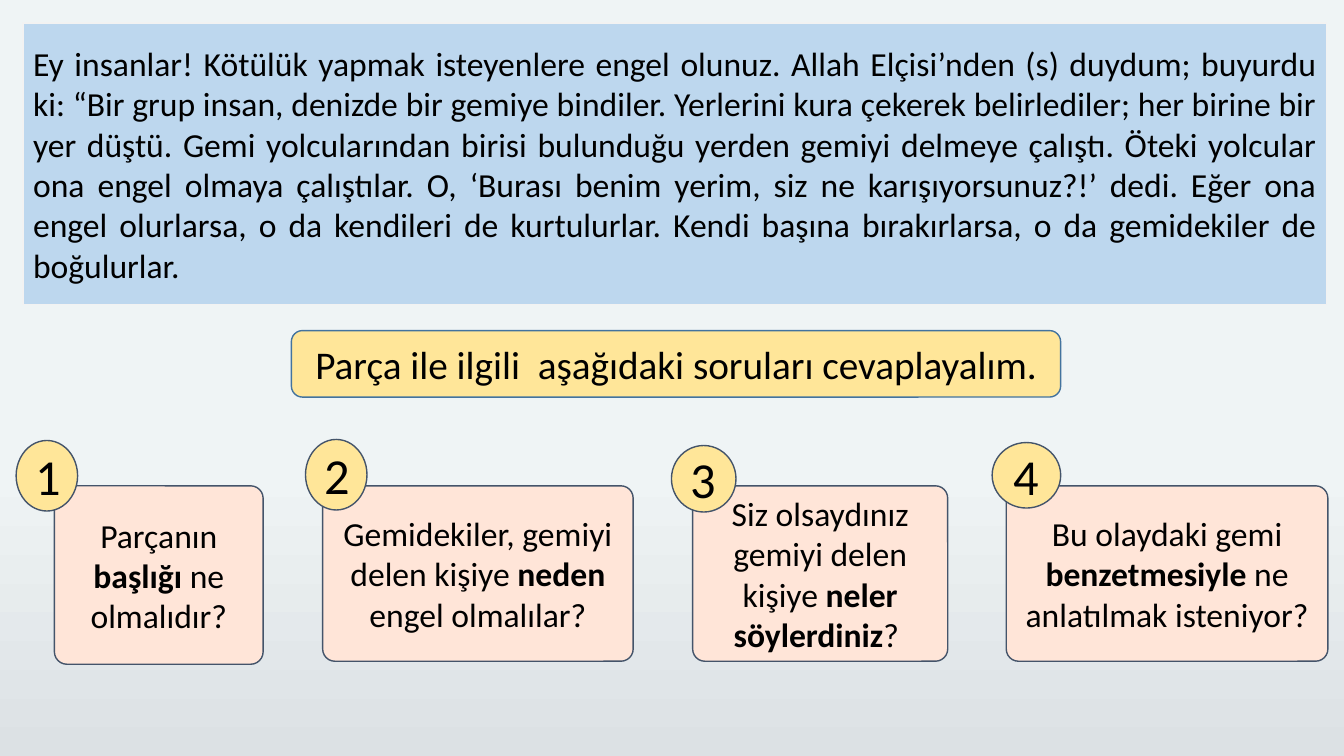
from pptx import Presentation
from pptx.dml.color import RGBColor
from pptx.enum.shapes import MSO_SHAPE as Shape
from pptx.enum.text import MSO_ANCHOR as Anchor, PP_ALIGN as Align
from pptx.util import Inches, Pt

PASSAGE = (
    "Ey insanlar! Kötülük yapmak isteyenlere engel olunuz. Allah Elçisi’nden (s) duydum; "
    "buyurdu ki: “Bir grup insan, denizde bir gemiye bindiler. Yerlerini kura çekerek "
    "belirlediler; her birine bir yer düştü. Gemi yolcularından birisi bulunduğu yerden "
    "gemiyi delmeye çalıştı. Öteki yolcular ona engel olmaya çalıştılar. O, ‘Burası benim "
    "yerim, siz ne karışıyorsunuz?!’ dedi. Eğer ona engel olurlarsa, o da kendileri de "
    "kurtulurlar. Kendi başına bırakırlarsa, o da gemidekiler de boğulurlar."
)
PROMPT = "Parça ile ilgili  aşağıdaki soruları cevaplayalım."
QUESTIONS = [
    {"parts": ("Parçanın ", "başlığı", " ne olmalıdır?"),
     "card": (0.54, 2.07, 1.77), "badge": (0.16, 4.37, 0.61, 0.7)},
    {"parts": ("Gemidekiler, gemiyi delen kişiye ", "neden", " engel olmalılar?"),
     "card": (3.2, 3.08, 1.74), "badge": (3.03, 4.36, 0.61, 0.7)},
    {"parts": ("Siz olsaydınız gemiyi delen kişiye ", "neler söylerdiniz", "? "),
     "card": (6.87, 2.53, 1.74), "badge": (6.66, 4.42, 0.64, 0.66)},
    {"parts": ("Bu olaydaki gemi ", "benzetmesiyle", " ne anlatılmak isteniyor?"),
     "card": (9.98, 3.19, 1.74), "badge": (9.84, 4.39, 0.68, 0.65)},
]
CARD_TOP = 4.82
CARD_ROUNDING = 0.07

BLACK = RGBColor(0x00, 0x00, 0x00)
PALE_GREY = RGBColor(0xF2, 0xF2, 0xF2)
LIGHT_BLUE = RGBColor(0xBD, 0xD7, 0xEE)
YELLOW = RGBColor(0xFF, 0xE6, 0x99)
PEACH = RGBColor(0xFF, 0xE5, 0xD8)
BLUE = RGBColor(0x43, 0x73, 0x9E)
SLATE = RGBColor(0x44, 0x54, 0x6A)
BACKGROUND = [(0.62, RGBColor(0xEF, 0xF4, 0xF5)), (1, RGBColor(0xDC, 0xE1, 0xE4))]


def add_box(page, parts, kind, area, fill, line, size=24, align=Align.CENTER):
    box = page.shapes.add_shape(kind, *(Inches(length) for length in area))
    box.shadow.inherit = False
    box.fill.solid()
    box.fill.fore_color.rgb = fill
    box.line.color.rgb = line
    box.line.width = Pt(1)
    frame = box.text_frame
    frame.word_wrap = True
    frame.vertical_anchor = Anchor.MIDDLE
    para = frame.paragraphs[0]
    para.alignment = align
    for index, text in enumerate(parts):
        span = para.add_run()
        span.text = text
        span.font.name = "Calibri"
        span.font.size = Pt(size)
        span.font.bold = index == 1
        span.font.color.rgb = BLACK
    return box


def paint_background(page):
    fill = page.background.fill
    fill.gradient()
    fill.gradient_angle = 270
    for stop, (position, color) in zip(fill.gradient_stops, BACKGROUND):
        stop.position = position
        stop.color.rgb = color


def main():
    deck = Presentation()
    deck.slide_width = Inches(13.33)
    deck.slide_height = Inches(7.5)
    page = deck.slides.add_slide(deck.slide_layouts[6])
    paint_background(page)

    add_box(page, [PASSAGE], Shape.RECTANGLE, (0.23, 0.23, 12.93, 2.79),
            LIGHT_BLUE, PALE_GREY, align=Align.JUSTIFY)
    add_box(page, [PROMPT], Shape.ROUNDED_RECTANGLE, (2.89, 3.28, 7.63, 0.66),
            YELLOW, BLUE, size=28)

    for number, question in enumerate(QUESTIONS, 1):
        left, width, height = question["card"]
        card = add_box(page, question["parts"], Shape.ROUNDED_RECTANGLE,
                       (left, CARD_TOP, width, height), PEACH, SLATE)
        card.adjustments[0] = CARD_ROUNDING
        add_box(page, [str(number)], Shape.OVAL, question["badge"], YELLOW, SLATE, size=36)

    deck.save("out.pptx")


if __name__ == "__main__":
    main()
